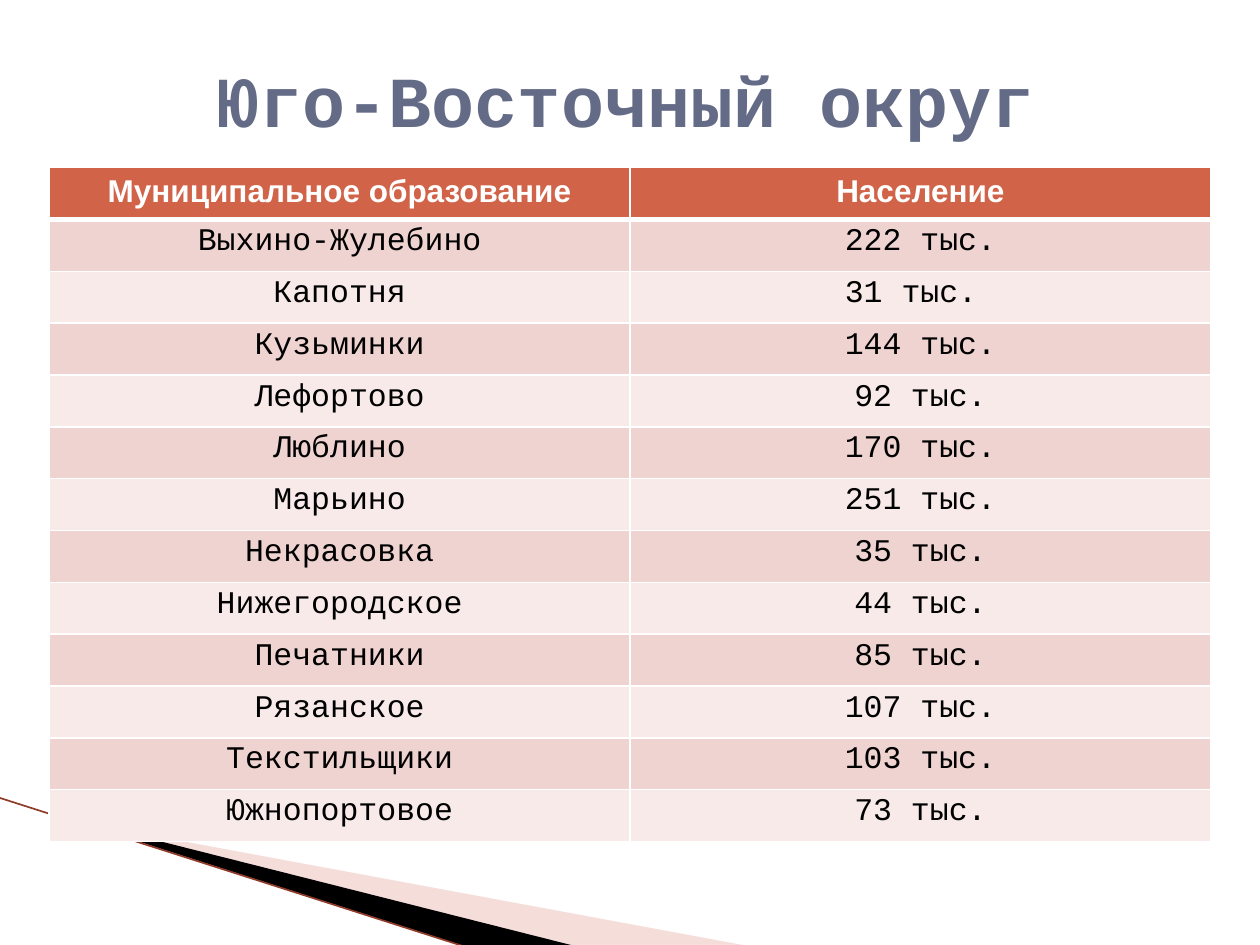
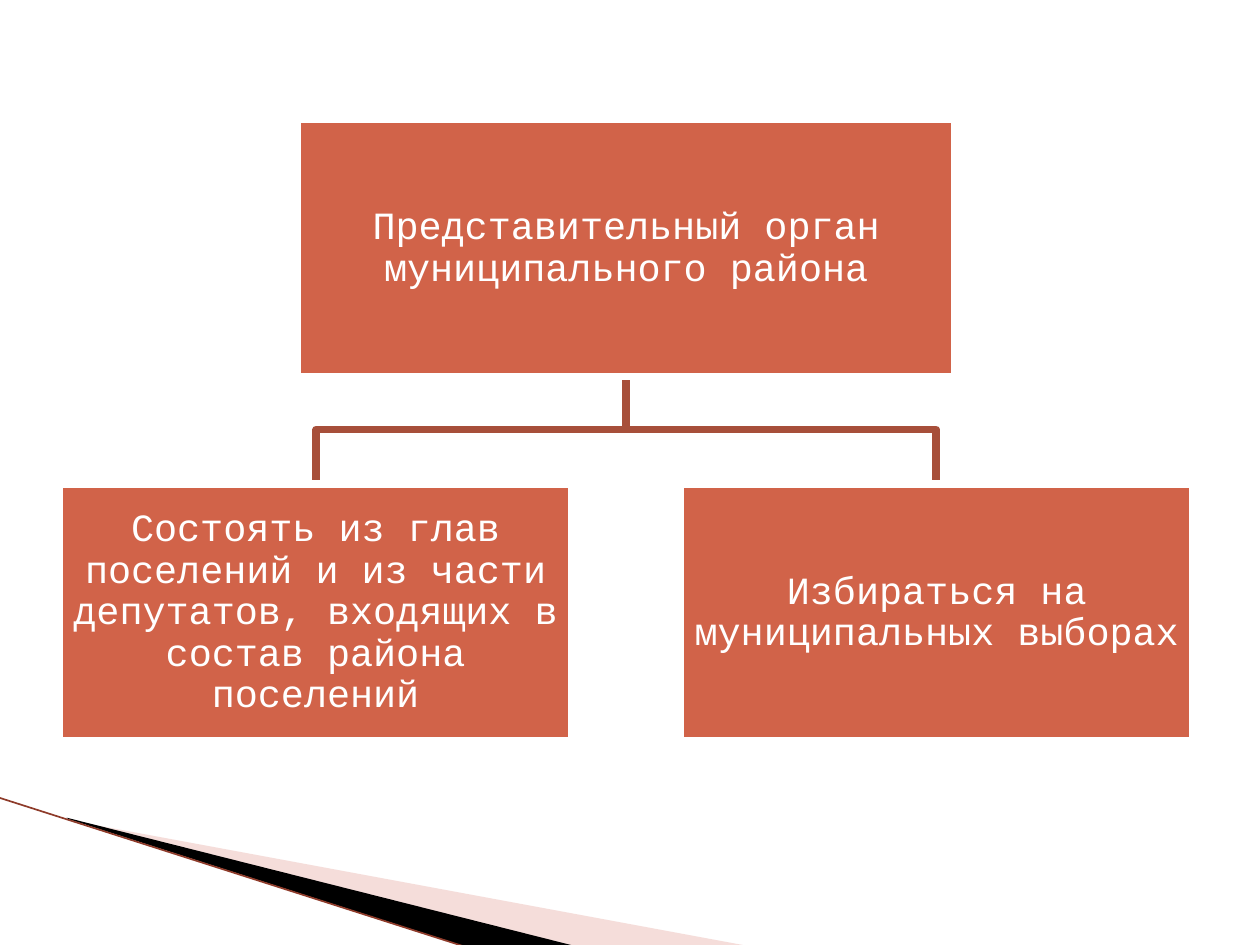
from lxml import etree
from pptx import Presentation
from pptx import util as u
from pptx.dml.color import RGBColor
from pptx.enum import shapes, text
from pptx.oxml.ns import qn

COLORS = {
    "title": "646B86", "accent": "D16349", "branch": "A74F3A", "edge": "8E3B2A",
    "wedge": "E7ACA4", "dark": "EED3D0", "light": "F7EAE9",
    "white": "FFFFFF", "black": "000000",
}
C = {name: RGBColor.from_string(value) for name, value in COLORS.items()}
MONO = "Courier New"


def write(tf, txt, size=18, color="white", font=MONO, bold=False, spacing=None, inset=None):
    tf.word_wrap = True
    tf.vertical_anchor = text.MSO_ANCHOR.MIDDLE
    if inset is not None:
        tf.margin_left = tf.margin_right = u.Inches(inset)
        tf.margin_top = tf.margin_bottom = u.Inches(inset)
    p = tf.paragraphs[0]
    p.alignment = text.PP_ALIGN.CENTER
    p.line_spacing = spacing
    r = p.add_run()
    r.text = txt
    r.font.name, r.font.size, r.font.bold = font, u.Pt(size), bold
    r.font.color.rgb = C[color]


def outline(s, points, close):
    pts = [(u.Inches(x), u.Inches(y)) for x, y in points]
    fb = s.shapes.build_freeform(*pts[0])
    fb.add_line_segments(pts[1:], close=close)
    sp = fb.convert_to_shape()
    sp.shadow.inherit = False
    return sp


prs = Presentation()
prs.slide_width, prs.slide_height = u.Inches(10), u.Inches(7.5)

wedges = [
    ("wedge", [(0.55, 6.51), (5.95, 7.51), (4.56, 7.51), (0.55, 6.5)]),
    ("black", [(0.53, 6.49), (4.57, 7.51), (3.72, 7.52), (0.54, 6.5)]),
]
slides = []
for _ in range(2):
    s = prs.slides.add_slide(prs.slide_layouts[6])
    for color, points in wedges:
        sp = outline(s, points, True)
        sp.fill.solid()
        sp.fill.fore_color.rgb = C[color]
        sp.line.fill.background()
        if color == "wedge":
            clr = sp._element.spPr.find(qn("a:solidFill"))[0]
            etree.SubElement(clr, qn("a:alpha"), val="40000")
    ln = s.shapes.add_connector(shapes.MSO_CONNECTOR.STRAIGHT, u.Inches(-0.01),
                                u.Inches(6.33), u.Inches(3.71), u.Inches(7.52))
    ln.line.color.rgb = C["edge"]
    ln.line.width = u.Pt(0.95)
    etree.SubElement(ln._element.spPr, qn("a:effectLst"))
    slides.append(s)

s = slides[0]
rows = [
    ("Муниципальное образование", "Население"),
    ("Выхино-Жулебино", "222 тыс."),
    ("Капотня", "31 тыс. "),
    ("Кузьминки", "144 тыс."),
    ("Лефортово", "92 тыс."),
    ("Люблино", "170 тыс."),
    ("Марьино", "251 тыс."),
    ("Некрасовка", "35 тыс."),
    ("Нижегородское", "44 тыс."),
    ("Печатники", "85 тыс."),
    ("Рязанское", "107 тыс."),
    ("Текстильщики", "103 тыс."),
    ("Южнопортовое", "73 тыс."),
]
tbl = s.shapes.add_table(len(rows), 2, u.Inches(0.39), u.Inches(1.33),
                         u.Inches(9.22), u.Inches(5.35)).table
tbl.horz_banding = False
for i, row in enumerate(rows):
    for j, value in enumerate(row):
        cell = tbl.cell(i, j)
        tcPr = cell._tc.get_or_add_tcPr()
        for side in "LRTB":
            thick = (i == 0 and side == "B") or (i == 1 and side == "T")
            border = etree.SubElement(tcPr, qn("a:ln" + side), w=str(u.Pt(3 if thick else 1)))
            fill = etree.SubElement(border, qn("a:solidFill"))
            etree.SubElement(fill, qn("a:srgbClr"), val=COLORS["white"])
        cell.fill.solid()
        if i == 0:
            cell.fill.fore_color.rgb = C["accent"]
            write(cell.text_frame, value, font="Arial", bold=True)
            cell.vertical_anchor = text.MSO_ANCHOR.TOP
        else:
            cell.fill.fore_color.rgb = C["dark" if i % 2 else "light"]
            write(cell.text_frame, value, color="black", spacing=u.Pt(16.8))
            cell.vertical_anchor = text.MSO_ANCHOR.MIDDLE
            cell.margin_left = cell.margin_right = u.Inches(0.03)
            cell.margin_top = cell.margin_bottom = u.Inches(0.01)

tb = s.shapes.add_textbox(u.Inches(0.47), u.Inches(0.16), u.Inches(9), u.Inches(1.25))
write(tb.text_frame, "Юго-Восточный округ", size=41, color="title", bold=True)

s = slides[1]
for x in (7.43, 2.51):
    sp = outline(s, [(4.97, 2.98), (4.97, 3.41), (x, 3.41), (x, 3.84)], False)
    sp.fill.background()
    sp.line.color.rgb = C["branch"]
    sp.line.width = u.Pt(4.33)

boxes = [
    (2.36, 0.95, 5.22, "Представительный орган муниципального района"),
    (0.47, 3.84, 4.07, "Состоять из глав поселений и из части депутатов, "
                       "входящих в состав района поселений"),
    (5.4, 3.84, 4.07, "Избираться на муниципальных выборах"),
]
for x, y, w, label in boxes:
    sp = s.shapes.add_shape(shapes.MSO_SHAPE.RECTANGLE, u.Inches(x), u.Inches(y),
                            u.Inches(w), u.Inches(2.04))
    sp.shadow.inherit = False
    sp.fill.solid()
    sp.fill.fore_color.rgb = C["accent"]
    sp.line.color.rgb = C["white"]
    sp.line.width = u.Pt(4.33)
    write(sp.text_frame, label, size=22, spacing=0.9, inset=0.02)

prs.save("out.pptx")
